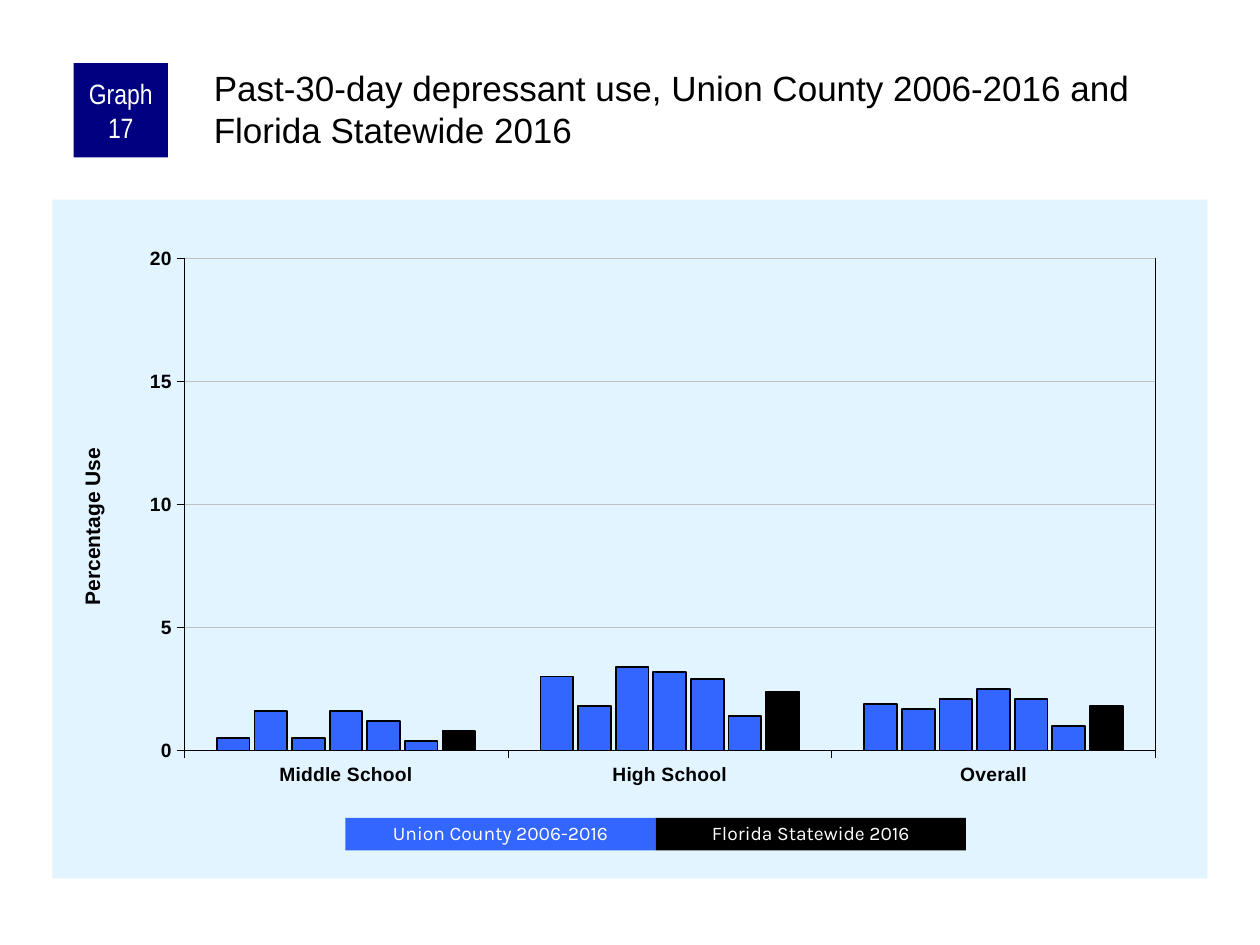
from dataclasses import dataclass

from lxml import etree
from pptx import Presentation
from pptx import util as u
from pptx.chart.data import CategoryChartData
from pptx.dml.color import RGBColor
from pptx.enum import chart as charts, shapes, text
from pptx.oxml import parse_xml
from pptx.oxml.ns import nsdecls, qn


@dataclass(frozen=True)
class Theme:
    """Colours, fonts and type sizes of the slide."""
    ink: str = "000000"
    paper: str = "FFFFFF"
    navy: str = "000080"
    county: str = "3366FF"
    state: str = "000000"
    panel: str = "E1F4FF"
    grid: str = "C0C0C0"
    body: str = "Arial"
    narrow: str = "Arial Narrow"
    legend: str = "Karla"
    title_size: float = 20
    badge_size: float = 16
    axis_title_size: float = 12
    label_size: float = 11
    chart_size: float = 8


class GraphSlide:
    """Holds the theme and the current slide, laid out on a 24 by 18 grid."""

    def __init__(self, deck, theme):
        """Add a title-only slide to the deck."""
        self.theme = theme
        self.column = deck.slide_width / 24
        self.row = deck.slide_height / 18
        self.slide = deck.slides.add_slide(deck.slide_layouts[5])

    def area(self, left, top, width, height):
        """Turn columns and rows into lengths."""
        return (round(left * self.column), round(top * self.row),
                round(width * self.column), round(height * self.row))

    def style(self, font, face, size, color, bold=False):
        """Format one font."""
        font.name, font.size, font.bold = face, u.Pt(size), bold
        font.color.rgb = RGBColor.from_string(color)

    def outline(self, line, color, width):
        """Format one line."""
        line.color.rgb = RGBColor.from_string(color)
        line.width = u.Pt(width)

    def fill_text(self, frame, words, insets, anchor, align, face, size, color):
        """Fill a text frame with one formatted paragraph."""
        frame.text = words
        frame.word_wrap = True
        frame.auto_size = text.MSO_AUTO_SIZE.NONE
        frame.vertical_anchor = anchor
        (frame.margin_left, frame.margin_top,
         frame.margin_right, frame.margin_bottom) = map(u.Inches, insets)
        paragraph = frame.paragraphs[0]
        paragraph.alignment = align
        self.style(paragraph.runs[0].font, face, size, color)
        return paragraph

    def title(self, words, *cells):
        """Move and format the title placeholder."""
        heading = self.slide.shapes.title
        heading.left, heading.top, heading.width, heading.height = self.area(*cells)
        self.fill_text(heading.text_frame, words, (0.03, 0.03, 0, 0),
                       text.MSO_ANCHOR.TOP, text.PP_ALIGN.LEFT,
                       self.theme.body, self.theme.title_size, self.theme.ink)

    def box(self, words, fill, face, size, insets, *cells):
        """Add a filled rectangle with centred text."""
        tile = self.slide.shapes.add_shape(shapes.MSO_SHAPE.RECTANGLE, *self.area(*cells))
        tile.shadow.inherit = False
        tile.fill.solid()
        tile.fill.fore_color.rgb = RGBColor.from_string(fill)
        tile.line.fill.background()
        return self.fill_text(tile.text_frame, words, insets, text.MSO_ANCHOR.MIDDLE,
                              text.PP_ALIGN.CENTER, face, size, self.theme.paper)

    def legend_key(self, words, fill, *cells):
        """Add one key of the legend."""
        label = self.box(words, fill, self.theme.legend, self.theme.label_size,
                         (0.1, 0.05, 0.1, 0.05), *cells)
        label.line_spacing = 0.9

    def layout(self, parent, position, **shares):
        """Place a chart part by shares of the chart's size."""
        for old in parent.findall(qn("c:layout")):
            parent.remove(old)
        node = parse_xml(f"<c:layout {nsdecls('c')}><c:manualLayout/></c:layout>")
        for tag, value in shares.items():
            etree.SubElement(node[0], qn(f"c:{tag}")).set("val", str(value))
        parent.insert(position, node)

    def surface(self, fill, line):
        """Return the fill and outline of a chart part."""
        def paint(color):
            return (f'<a:solidFill><a:srgbClr val="{color}"/></a:solidFill>'
                    if color else "<a:noFill/>")
        return parse_xml(f"<c:spPr {nsdecls('c', 'a')}>{paint(fill)}"
                         f'<a:ln w="3175">{paint(line)}</a:ln></c:spPr>')

    def axis(self, axis):
        """Format the line, ticks and labels of an axis."""
        axis.major_tick_mark = charts.XL_TICK_MARK.OUTSIDE
        axis.minor_tick_mark = charts.XL_TICK_MARK.NONE
        self.style(axis.tick_labels.font, self.theme.body,
                   self.theme.label_size, self.theme.ink, True)
        self.outline(axis.format.line, self.theme.ink, 0.25)

    def columns(self, groups, values, colors, caption, *cells):
        """Add the clustered column chart."""
        theme = self.theme
        data = CategoryChartData()
        data.categories = groups
        for number, row in enumerate(values, 1):
            data.add_series(f"Series {number}", row)
        chart = self.slide.shapes.add_chart(
            charts.XL_CHART_TYPE.COLUMN_CLUSTERED, *self.area(*cells), data).chart
        chart.has_legend = chart.has_title = False
        self.style(chart.font, theme.body, theme.chart_size, theme.ink)
        chart.element.find(qn("c:txPr")).addprevious(self.surface(theme.panel, None))

        plot = chart.plots[0]
        plot.gap_width, plot.overlap, plot.vary_by_categories = 200, -15, False
        for series, color in zip(plot.series, colors):
            series.invert_if_negative = False
            series.format.fill.solid()
            series.format.fill.fore_color.rgb = RGBColor.from_string(color)
            self.outline(series.format.line, theme.ink, 1)

        self.axis(chart.category_axis)
        scale = chart.value_axis
        self.axis(scale)
        scale.minimum_scale, scale.maximum_scale, scale.major_unit = 0, 20, 5
        scale.has_major_gridlines = True
        self.outline(scale.major_gridlines.format.line, theme.grid, 0.25)
        frame = scale.axis_title.text_frame
        frame.text = caption
        self.style(frame.paragraphs[0].runs[0].font, theme.body,
                   theme.axis_title_size, theme.ink, True)
        self.layout(chart.element.find(f".//{qn('c:valAx')}/{qn('c:title')}"), 1,
                    xMode="edge", yMode="edge", x=0.02, y=0.36)

        plot_area = chart.element.find(f".//{qn('c:plotArea')}")
        self.layout(plot_area, 0, layoutTarget="inner", xMode="edge", yMode="edge",
                    x=0.114, y=0.086, w=0.841, h=0.726)
        plot_area.append(self.surface(None, theme.ink))


def main():
    """Build and save the slide."""
    deck = Presentation()
    deck.slide_width, deck.slide_height = u.Inches(10), u.Inches(7.5)
    theme = Theme()
    graph = GraphSlide(deck, theme)

    groups = ["Middle School", "High School", "Overall"]
    county_use = [(0.5, 3, 1.9), (1.6, 1.8, 1.7), (0.5, 3.4, 2.1),
                  (1.6, 3.2, 2.5), (1.2, 2.9, 2.1), (0.4, 1.4, 1)]
    state_use = (0.8, 2.4, 1.8)
    colors = [theme.county] * len(county_use) + [theme.state]
    graph.columns(groups, county_use + [state_use], colors, "Percentage Use",
                  1, 3.8, 22, 12.93)

    graph.box("Graph 17", theme.navy, theme.narrow, theme.badge_size,
              (0.05, 0, 0.05, 0), 1.4, 1.2, 1.8, 1.8)
    graph.title("Past-30-day depressant use, Union County 2006-2016 and "
                "Florida Statewide 2016", 4, 1.2, 19, 2)

    key_left, key_width = 6.58, 5.91
    keys = [("Union County 2006-2016", theme.county),
            ("Florida Statewide 2016", theme.state)]
    for place, (label, color) in enumerate(keys):
        graph.legend_key(label, color, key_left + place * key_width, 15.58, key_width, 0.62)

    deck.save("out.pptx")


if __name__ == "__main__":
    main()
